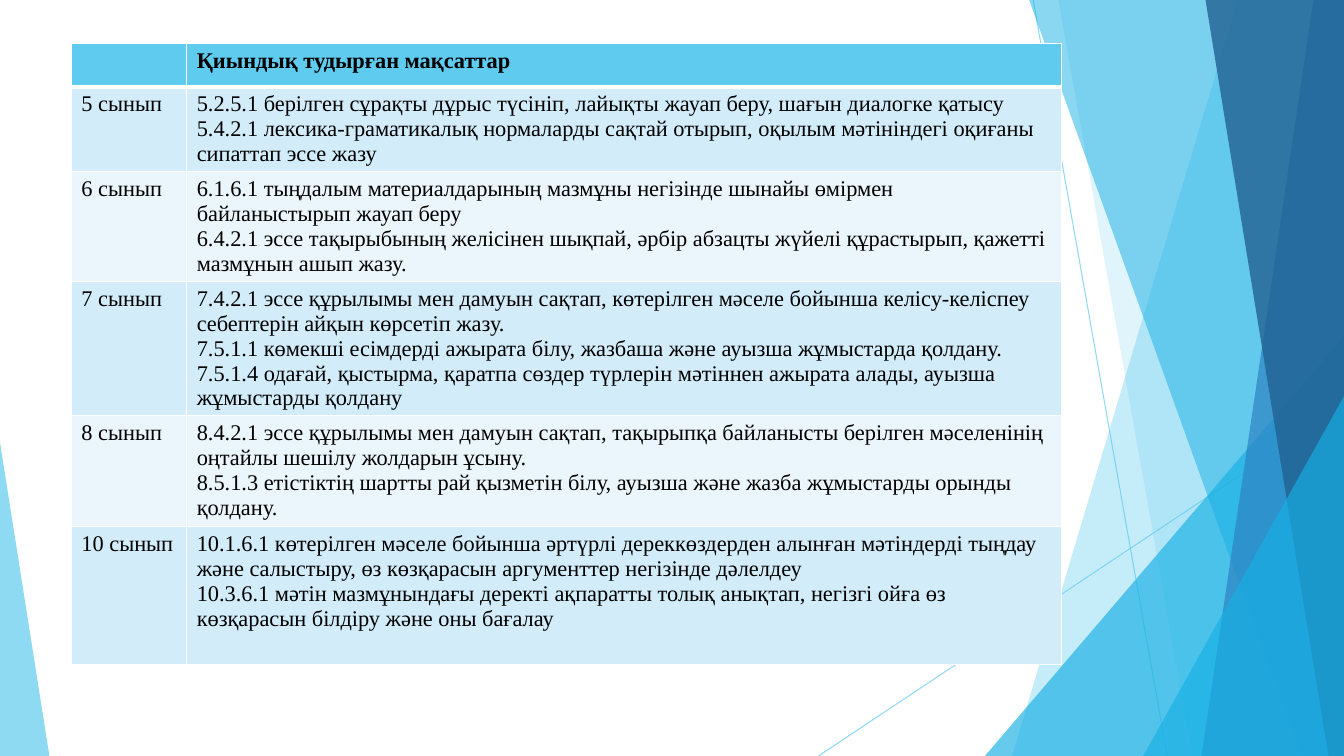
from lxml import etree
from pptx import Presentation
from pptx import util as u
from pptx.dml.color import RGBColor
from pptx.enum import shapes
from pptx.oxml.ns import qn

Pt = u.Pt
WIDTH, HEIGHT = 960, 540
FONT = "Times New Roman"
COLOURS = {
    "sky": "5FCBEF",
    "cyan": "17B0E4",
    "blue": "2E83C3",
    "navy": "226292",
    "row_dark": "D2ECF9",
    "row_light": "EAF6FC",
    "border": "FFFFFF",
    "text": "000000",
}

RAYS = [((738, 0), (833.76, 540)), ((960, 290.16), (584.64, 540))]

# Each band runs from its slanted left edge to the right side of the slide:
# x at the top, x at the bottom, colour, opacity in percent
BACK_BANDS = [(884.16, 722.88, "sky", 36), (756, 851.76, "sky", 20)]
FRONT_BANDS = [
    (735.12, 929.52, "cyan", 50),
    (938.16, 858.24, "blue", 70),
    (861.12, 948.96, "navy", 80),
]

COLUMN_WIDTHS = [82.4, 624.6]
ROW_HEIGHTS = [30.96, 60.5, 78.5, 96, 79, 98.6]
HEADING = "Қиындық тудырған мақсаттар"
GOALS = [
    ("5 сынып", [
        "5.2.5.1 берілген сұрақты дұрыс түсініп, лайықты жауап беру, шағын диалогке қатысу",
        "5.4.2.1 лексика-граматикалық нормаларды сақтай отырып, оқылым мәтініндегі оқиғаны "
        "сипаттап эссе жазу",
    ]),
    ("6 сынып", [
        "6.1.6.1 тыңдалым материалдарының мазмұны негізінде шынайы өмірмен байланыстырып "
        "жауап беру",
        "6.4.2.1 эссе тақырыбының желісінен шықпай, әрбір абзацты жүйелі құрастырып, қажетті "
        "мазмұнын ашып жазу.",
    ]),
    ("7 сынып", [
        "7.4.2.1 эссе құрылымы мен дамуын сақтап, көтерілген мәселе бойынша келісу-келіспеу "
        "себептерін айқын көрсетіп жазу.",
        "7.5.1.1 көмекші есімдерді ажырата білу, жазбаша және ауызша жұмыстарда қолдану.",
        "7.5.1.4 одағай, қыстырма, қаратпа сөздер түрлерін мәтіннен ажырата алады, ауызша "
        "жұмыстарды қолдану",
    ]),
    ("8 сынып", [
        "8.4.2.1 эссе құрылымы мен дамуын сақтап, тақырыпқа байланысты берілген мәселенінің "
        "оңтайлы шешілу жолдарын ұсыну.",
        "8.5.1.3 етістіктің шартты рай қызметін білу, ауызша және жазба жұмыстарды орынды "
        "қолдану.",
    ]),
    ("10 сынып", [
        "10.1.6.1 көтерілген мәселе бойынша әртүрлі дереккөздерден алынған мәтіндерді тыңдау "
        "және салыстыру, өз көзқарасын аргументтер негізінде дәлелдеу",
        "10.3.6.1 мәтін мазмұнындағы деректі ақпаратты толық анықтап, негізгі ойға өз "
        "көзқарасын білдіру және оны бағалау",
    ]),
]


def colour(name):
    return RGBColor.from_string(COLOURS[name])


def set_opacity(shape, percent):
    for node in shape._element.iter(qn("a:srgbClr")):
        etree.SubElement(node, qn("a:alpha"), val=str(percent * 1000))


def style_shape(shape, fill, opacity):
    shape.shadow.inherit = False
    shape.fill.solid()
    shape.fill.fore_color.rgb = colour(fill)
    shape.line.fill.background()
    set_opacity(shape, opacity)


def add_ray(slide, start, end):
    points = [Pt(value) for value in (*start, *end)]
    ray = slide.shapes.add_connector(shapes.MSO_CONNECTOR.STRAIGHT, *points)
    ray.line.color.rgb = colour("sky")
    ray.line.width = Pt(0.75)
    set_opacity(ray, 70)
    etree.SubElement(ray._element.spPr, qn("a:effectLst"))


def add_band(slide, top_x, bottom_x, fill, opacity):
    builder = slide.shapes.build_freeform(Pt(top_x), 0)
    corners = [(WIDTH, 0), (WIDTH, HEIGHT), (bottom_x, HEIGHT)]
    builder.add_line_segments([(Pt(x), Pt(y)) for x, y in corners])
    style_shape(builder.convert_to_shape(), fill, opacity)


def add_corner(slide, left, top, width, apex, fill, opacity):
    """Add a right triangle standing on the bottom edge; apex 0 is left, 1 is right."""
    corner = slide.shapes.add_shape(
        shapes.MSO_SHAPE.ISOSCELES_TRIANGLE,
        Pt(left), Pt(top), Pt(width), Pt(HEIGHT - top))
    corner.adjustments[0] = apex
    style_shape(corner, fill, opacity)


def write_text(frame, lines, size=16, bold=False, color="text"):
    for index, line in enumerate(lines):
        paragraph = frame.paragraphs[0] if index == 0 else frame.add_paragraph()
        run = paragraph.add_run()
        run.text = line
        run.font.name = FONT
        run.font.size = Pt(size)
        run.font.bold = bold
        run.font.color.rgb = colour(color)


def set_borders(cell, **widths):
    properties = cell._tc.get_or_add_tcPr()
    for side in "LRTB":
        line = etree.SubElement(properties, qn(f"a:ln{side}"),
                                w=str(Pt(widths.get(side, 1))))
        fill = etree.SubElement(line, qn("a:solidFill"))
        etree.SubElement(fill, qn("a:srgbClr"), val=COLOURS["border"])


def fill_cell(cell, lines, fill, bold=False, **borders):
    set_borders(cell, **borders)
    cell.fill.solid()
    cell.fill.fore_color.rgb = colour(fill)
    write_text(cell.text_frame, lines, bold=bold)


def add_goals_table(slide):
    frame = slide.shapes.add_table(
        len(ROW_HEIGHTS), len(COLUMN_WIDTHS), Pt(51), Pt(30.96),
        Pt(sum(COLUMN_WIDTHS)), Pt(sum(ROW_HEIGHTS)))
    table = frame.table
    for column, width in zip(table.columns, COLUMN_WIDTHS):
        column.width = Pt(width)
    for row, height in zip(table.rows, ROW_HEIGHTS):
        row.height = Pt(height)

    for column, lines in enumerate([[], [HEADING]]):
        fill_cell(table.cell(0, column), lines, "sky", bold=True, B=3)
    for row, (grade, goals) in enumerate(GOALS, start=1):
        fill = "row_dark" if row % 2 else "row_light"
        top = 3 if row == 1 else 1
        for column, lines in enumerate([[grade], goals]):
            fill_cell(table.cell(row, column), lines, fill, T=top)


def main():
    presentation = Presentation()
    presentation.slide_width = Pt(WIDTH)
    presentation.slide_height = Pt(HEIGHT)
    slide = presentation.slides.add_slide(presentation.slide_layouts[6])

    for start, end in RAYS:
        add_ray(slide, start, end)
    for band in BACK_BANDS:
        add_band(slide, *band)
    add_corner(slide, 703.5, 240, 256.5, 1, "cyan", 66)
    for band in FRONT_BANDS:
        add_band(slide, *band)
    add_corner(slide, 816.6, 283, 143.4, 1, "cyan", 66)
    add_corner(slide, 0, 316, 35.3, 0, "sky", 70)
    add_goals_table(slide)

    presentation.save("out.pptx")


if __name__ == "__main__":
    main()
